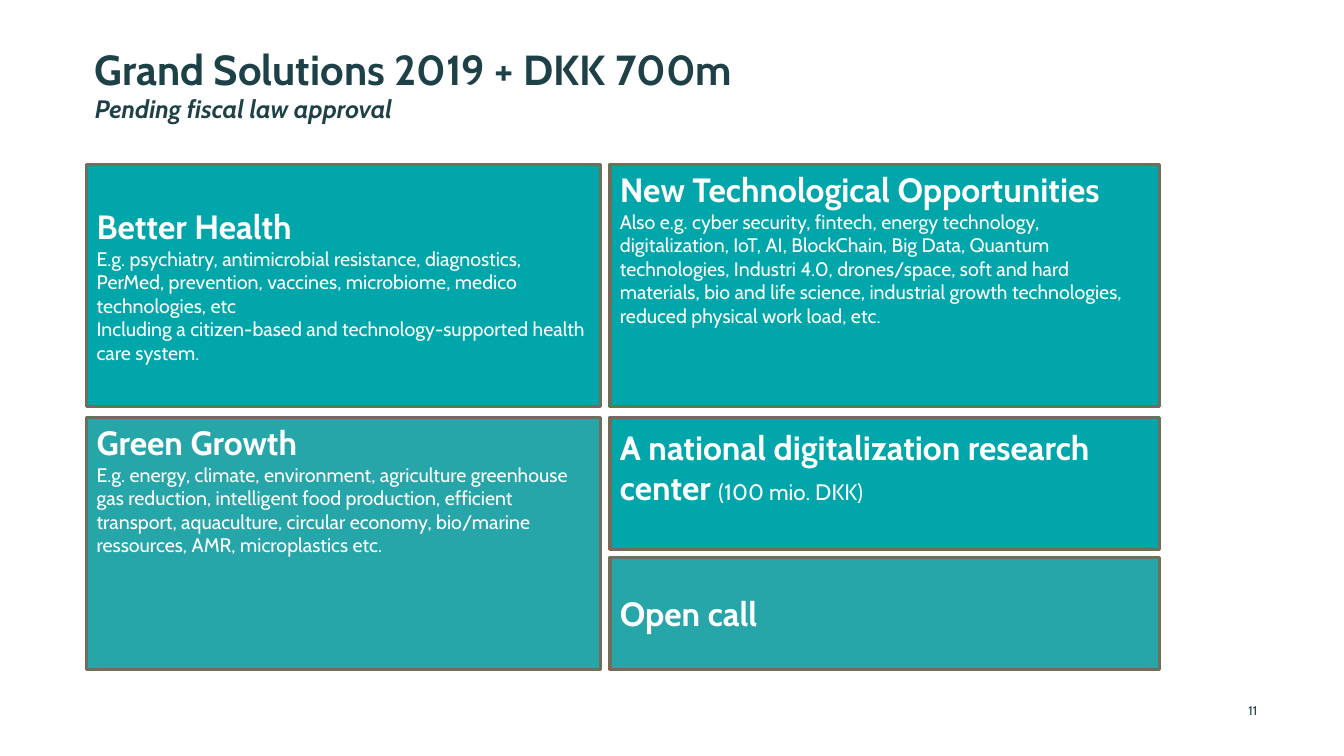
from pptx import Presentation
from pptx.dml.color import RGBColor
from pptx.enum.shapes import MSO_SHAPE as Shape
from pptx.enum.text import MSO_ANCHOR as Anchor, PP_ALIGN as Align
from pptx.util import Inches, Pt

# Content: each paragraph is a list of (text, size, bold, italic) runs
FONT = "Cabin"
INK, WHITE, BORDER = "1E4148", "FFFFFF", "6E6E5A"
TEAL, SOFT_TEAL = "00A6AA", "27A6AA"

TITLE = [
    [("Grand Solutions 2019 + DKK 700m", 30, True, False)],
    [("Pending fiscal law approval", 18, True, True)],
]
PAGE_NUMBER = [[("11", 9, False, False)]]


def heading(text):
    return (text, 24, True, False)


def body(text, size=14):
    return (text, size, False, False)


HEALTH = [
    [heading("Better Health")],
    [body("E.g. psychiatry, antimicrobial resistance, diagnostics, PerMed, "
          "prevention, vaccines, microbiome, medico technologies, etc")],
    [body("Including a citizen-based and technology-supported health care system.")],
]
TECHNOLOGY = [
    [heading("New Technological Opportunities")],
    [body("Also e.g. cyber security, fintech, energy technology, digitalization, "
          "IoT, AI, BlockChain, Big Data, Quantum technologies, Industri 4.0, "
          "drones/space, soft and hard materials, bio and life science, "
          "industrial growth technologies, reduced physical work load, etc.")],
]
GREEN = [
    [heading("Green Growth")],
    [body("E.g. energy, climate, environment, agriculture greenhouse gas reduction, "
          "intelligent food production, efficient transport, aquaculture, circular "
          "economy, bio/marine ressources, AMR, microplastics etc.")],
]
CENTER = [[heading("A national digitalization research center "),
           body("(100 mio. DKK)", 16)]]
OPEN_CALL = [[heading("Open call")]]

# Grid: (start, length) of each column and row
LEFT, RIGHT = (0.86, 5.1), (6.05, 5.45)
TOP, BOTTOM = (1.63, 2.4), (4.14, 2.5)
BOTTOM_UPPER, BOTTOM_LOWER = (4.14, 1.31), (5.53, 1.11)

# Column, row, fill, anchor, top inset, paragraphs
CARDS = [
    (LEFT, TOP, TEAL, Anchor.MIDDLE, 0.05, HEALTH),
    (RIGHT, TOP, TEAL, Anchor.TOP, 0.05, TECHNOLOGY),
    (LEFT, BOTTOM, SOFT_TEAL, Anchor.TOP, 0.05, GREEN),
    (RIGHT, BOTTOM_UPPER, TEAL, Anchor.TOP, 0.09, CENTER),
    (RIGHT, BOTTOM_LOWER, SOFT_TEAL, Anchor.MIDDLE, 0.05, OPEN_CALL),
]


def color(value):
    return RGBColor.from_string(value)


def write(shape, paragraphs, ink, anchor, insets, align=Align.LEFT):
    frame = shape.text_frame
    frame.word_wrap = True
    frame.vertical_anchor = anchor
    (frame.margin_left, frame.margin_top,
     frame.margin_right, frame.margin_bottom) = map(Inches, insets)
    for index, runs in enumerate(paragraphs):
        paragraph = frame.add_paragraph() if index else frame.paragraphs[0]
        paragraph.alignment = align
        for text, size, bold, italic in runs:
            run = paragraph.add_run()
            run.text = text
            font = run.font
            font.name, font.size = FONT, Pt(size)
            font.bold, font.italic = bold, italic
            font.color.rgb = color(ink)


def add_label(slide, box, paragraphs, anchor, align):
    label = slide.shapes.add_textbox(*map(Inches, box))
    write(label, paragraphs, INK, anchor, (0, 0, 0, 0), align)


def add_card(slide, column, row, fill, anchor, top_inset, paragraphs):
    box = (column[0], row[0], column[1], row[1])
    card = slide.shapes.add_shape(Shape.RECTANGLE, *map(Inches, box))
    card.shadow.inherit = False
    card.fill.solid()
    card.fill.fore_color.rgb = color(fill)
    card.line.color.rgb = color(BORDER)
    card.line.width = Pt(2.25)
    write(card, paragraphs, WHITE, anchor, (0.1, top_inset, 0.1, 0.05))


def main():
    presentation = Presentation()
    presentation.slide_width = Inches(13.33)
    presentation.slide_height = Inches(7.5)
    slide = presentation.slides.add_slide(presentation.slide_layouts[6])

    # Title and page number
    add_label(slide, (0.94, 0.43, 12.07, 0.51), TITLE, Anchor.TOP, Align.LEFT)
    add_label(slide, (12.04, 6.85, 0.43, 0.4), PAGE_NUMBER, Anchor.MIDDLE, Align.RIGHT)

    # Theme cards
    for card in CARDS:
        add_card(slide, *card)

    presentation.save("out.pptx")


if __name__ == "__main__":
    main()
